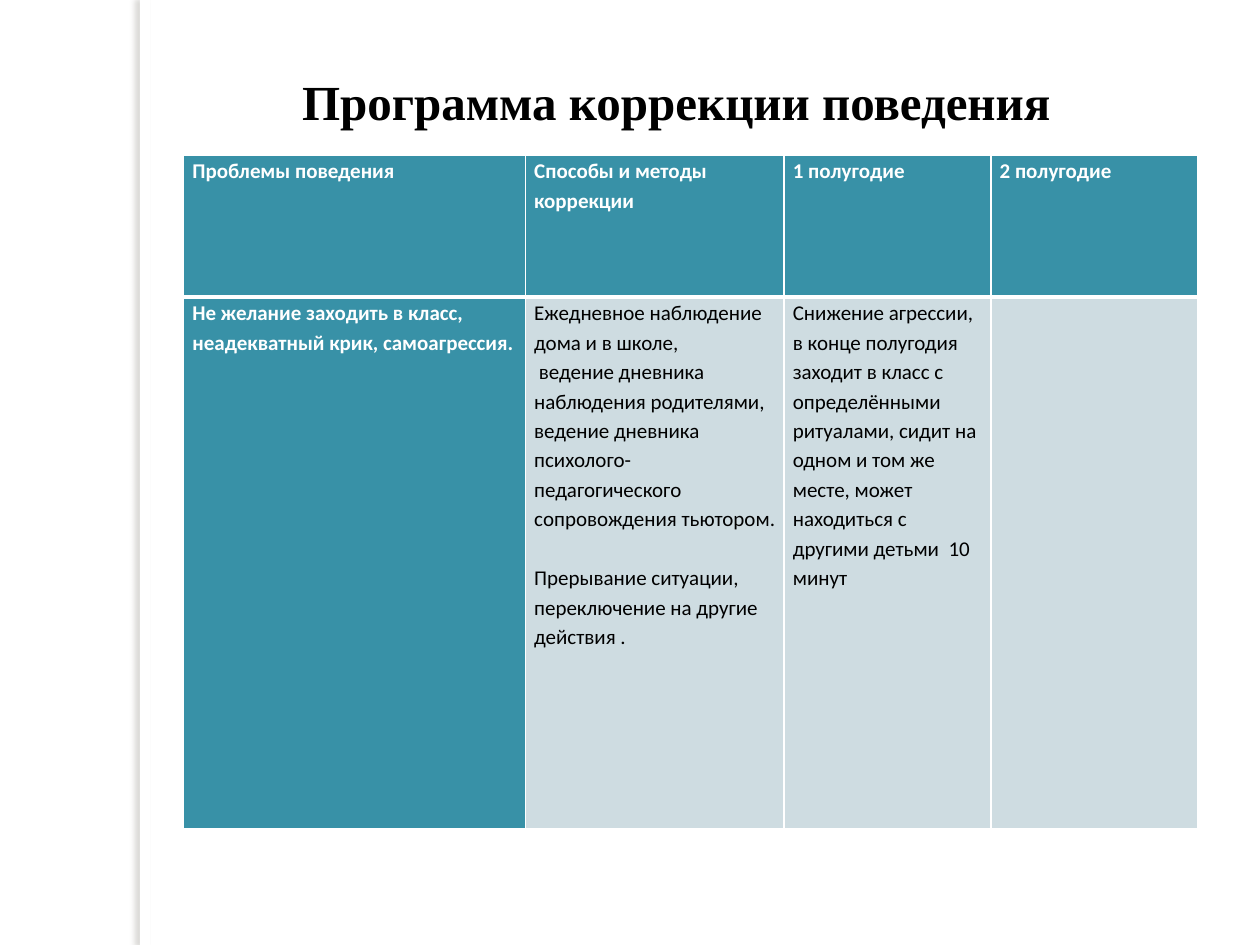
from lxml import etree
from pptx import Presentation
from pptx.dml.color import RGBColor
from pptx.enum.shapes import MSO_SHAPE
from pptx.enum.text import MSO_ANCHOR, PP_ALIGN
from pptx.oxml import parse_xml
from pptx.oxml.ns import nsdecls, qn
from pptx.util import Pt

RECTANGLE = MSO_SHAPE.RECTANGLE
TOP, LEFT = MSO_ANCHOR.TOP, PP_ALIGN.LEFT
TEAL, PALE, WHITE, BLACK, SHADOW = "3891A7", "CEDCE1", "FFFFFF", "000000", "736F63"

COLUMNS = [195.3, 147.8, 118.2, 118.2]
ROWS = [81.2, 304]
HEADER = ["Проблемы поведения", "Способы и методы коррекции", "1 полугодие", "2 полугодие"]
PROBLEM = "Не желание заходить в класс, неадекватный крик, самоагрессия."
METHODS = [
    "Ежедневное наблюдение дома и в школе,",
    " ведение дневника наблюдения родителями, ведение дневника "
    "психолого-педагогического сопровождения тьютором.",
    "Прерывание ситуации, переключение на другие действия .",
]
RESULT = ("Снижение агрессии, в конце полугодия заходит в класс с определёнными "
          "ритуалами, сидит на одном и том же месте, может находиться с другими "
          "детьми  10 минут")
CELLS = [[[text] for text in HEADER], [[PROBLEM], METHODS, [RESULT], []]]


def color(value):
    return RGBColor.from_string(value)


def add_side_strip(slide, x, y, w, h):
    """White strip that casts a soft shadow to the left."""
    sp = slide.shapes.add_shape(RECTANGLE, Pt(x), Pt(y), Pt(w), Pt(h))
    sp.fill.solid()
    sp.fill.fore_color.rgb = color(WHITE)
    sp.line.fill.background()
    sp.shadow.inherit = False
    effects = sp._element.spPr.find(qn("a:effectLst"))
    effects.append(parse_xml(
        f'<a:outerShdw {nsdecls("a")} blurRad="{Pt(3)}" dist="{Pt(3)}" dir="10800000">'
        f'<a:srgbClr val="{SHADOW}"><a:alpha val="25000"/></a:srgbClr></a:outerShdw>'))


def place_title(slide, x, y, w, h):
    title = slide.shapes.title
    title.left, title.top, title.width, title.height = Pt(x), Pt(y), Pt(w), Pt(h)
    tf = title.text_frame
    tf.text = "Программа коррекции поведения"
    tf.word_wrap = True
    tf.vertical_anchor = TOP
    tf.margin_left = Pt(51)
    p = tf.paragraphs[0]
    p.alignment = LEFT
    p.font.name, p.font.size, p.font.bold = "Times New Roman", Pt(28), True
    p.font.color.rgb = color(BLACK)


def set_borders(cell, widths):
    """Draw white cell borders; widths are keyed by side."""
    tc_pr = cell._tc.get_or_add_tcPr()
    for side in "LRTB":
        ln = etree.SubElement(tc_pr, qn(f"a:ln{side}"), w=str(Pt(widths.get(side, 1))))
        fill = etree.SubElement(ln, qn("a:solidFill"))
        etree.SubElement(fill, qn("a:srgbClr"), val=WHITE)


def fill_cell(cell, paragraphs, strong, widths):
    set_borders(cell, widths)
    cell.fill.solid()
    cell.fill.fore_color.rgb = color(TEAL if strong else PALE)
    cell.margin_left = cell.margin_right = Pt(5)
    cell.margin_top = cell.margin_bottom = 0
    tf = cell.text_frame
    for i, text in enumerate(paragraphs):
        p = tf.paragraphs[0] if i == 0 else tf.add_paragraph()
        p.text = text
        p.line_spacing = 1.15
        p.space_before = Pt(16.8 if i == 2 else 0)
        p.font.name, p.font.size, p.font.bold = "Calibri", Pt(12), strong
        p.font.color.rgb = color(WHITE if strong else BLACK)


def add_program_table(slide, x, y):
    table = slide.shapes.add_table(len(ROWS), len(COLUMNS), Pt(x), Pt(y),
                                   Pt(sum(COLUMNS)), Pt(sum(ROWS))).table
    for column, width in zip(table.columns, COLUMNS):
        column.width = Pt(width)
    for r, height in enumerate(ROWS):
        table.rows[r].height = Pt(height)
        widths = {"B": 3} if r == 0 else {"T": 3}
        for c, paragraphs in enumerate(CELLS[r]):
            fill_cell(table.cell(r, c), paragraphs, r == 0 or c == 0, widths)


def main():
    prs = Presentation()
    prs.slide_width, prs.slide_height = Pt(720), Pt(540)
    slide = prs.slides.add_slide(prs.slide_layouts[5])
    add_side_strip(slide, 80, 0, 5.8, 540)
    add_program_table(slide, 105, 88.6)
    place_title(slide, 121.7, 37.4, 516, 41)
    prs.save("out.pptx")


if __name__ == "__main__":
    main()
